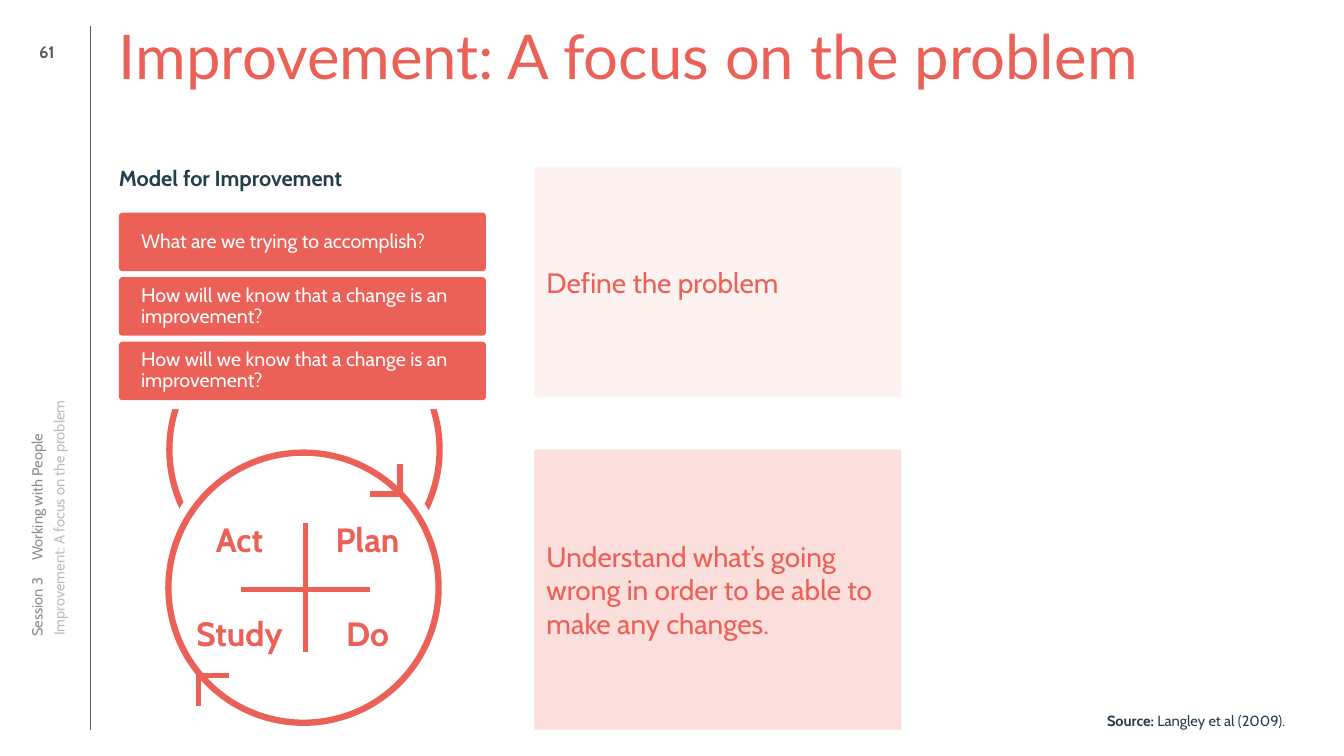
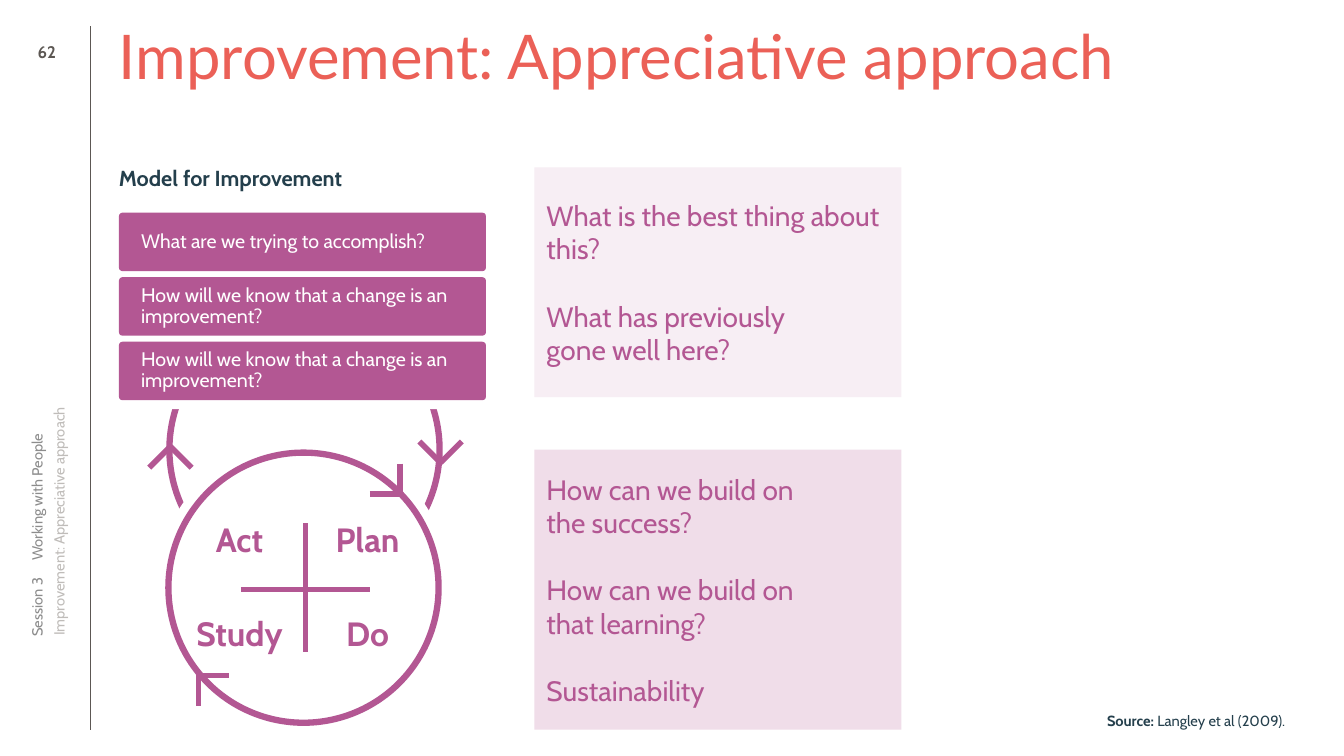
from lxml import etree
from pptx import Presentation
from pptx.dml.color import RGBColor
from pptx.enum.shapes import MSO_CONNECTOR, MSO_SHAPE
from pptx.enum.text import MSO_ANCHOR, PP_ALIGN
from pptx.oxml.ns import qn
from pptx.util import Inches, Pt

LINE = MSO_CONNECTOR.STRAIGHT
RECT, ROUNDED, OVAL = MSO_SHAPE.RECTANGLE, MSO_SHAPE.ROUNDED_RECTANGLE, MSO_SHAPE.OVAL
TOP, MIDDLE = MSO_ANCHOR.TOP, MSO_ANCHOR.MIDDLE
LEFT, CENTER = PP_ALIGN.LEFT, PP_ALIGN.CENTER

HEAD_FONT, BODY_FONT = "Lato", "Cabin"
CORAL, PURPLE, NAVY, WHITE = "EB6057", "B35793", "243F4C", "FFFFFF"
DARK_GREY, MID_GREY, PALE_GREY = "5C5753", "8C8C8C", "BFBCB9"

COLUMN_W = 3.64
QUESTIONS = [
    "What are we trying to accomplish?",
    "How will we know that a change is an improvement?",
    "How will we know that a change is an improvement?",
]
STEPS = [["Act", "Plan"], ["Study", "Do"]]


def color(hex_value):
    return RGBColor.from_string(hex_value)


def write(shape, paragraphs, size, ink, font=BODY_FONT, bold=False, align=LEFT,
          anchor=TOP, inset=(0, 0), spacing=1.0, gap=0, tab=None):
    """Fill a shape with paragraphs in one style."""
    frame = shape.text_frame
    frame.word_wrap = True
    frame.vertical_anchor = anchor
    frame.margin_left = frame.margin_right = Inches(inset[0])
    frame.margin_top = frame.margin_bottom = Inches(inset[1])
    for i, text in enumerate(paragraphs):
        p = frame.add_paragraph() if i else frame.paragraphs[0]
        p.text = text
        p.alignment = align
        p.line_spacing = spacing
        if i:
            p.space_before = Pt(gap)
        if tab:
            tabs = etree.SubElement(p._p.get_or_add_pPr(), qn("a:tabLst"))
            etree.SubElement(tabs, qn("a:tab"), pos=str(Inches(tab)), algn="l")
        p.font.size = Pt(size)
        p.font.name = font
        p.font.bold = bold
        p.font.color.rgb = color(ink)


def add_text(slide, box, text, size, ink, rotation=0, **style):
    label = slide.shapes.add_textbox(*map(Inches, box))
    label.rotation = rotation
    write(label, [text], size, ink, **style)
    return label


def add_block(slide, kind, box, fill, outline=None, width=4.5):
    block = slide.shapes.add_shape(kind, *map(Inches, box))
    block.shadow.inherit = False
    block.fill.solid()
    block.fill.fore_color.rgb = color(fill)
    if outline:
        block.line.color.rgb = color(outline)
        block.line.width = Pt(width)
    else:
        block.line.fill.background()
    return block


def add_line(slide, start, end, ink, width=4):
    line = slide.shapes.add_connector(LINE, *map(Inches, (*start, *end)))
    line.line.color.rgb = color(ink)
    line.line.width = Pt(width)
    etree.SubElement(line._element.spPr, qn("a:effectLst"))


def add_arrowhead(slide, tip, arms, ink):
    """Draw two strokes that meet at the tip."""
    for dx, dy in arms:
        add_line(slide, (tip[0] + dx, tip[1] + dy), tip, ink)


def add_frame(slide, number, title):
    """Title, side rule, page number, side labels and source."""
    add_line(slide, (0.89, 0.26), (0.89, 7.24), DARK_GREY, 0.25)
    add_text(slide, (1.18, 0.26, 11.89, 1.25), title, 44, CORAL,
             font=HEAD_FONT, spacing=0.9)
    add_text(slide, (0.26, 0.26, 0.41, 0.51), str(number), 12, DARK_GREY,
             bold=True, align=CENTER, anchor=MIDDLE)
    add_text(slide, (-1.96, 3.89, 4.65, 0.2), "Session 3\tWorking with People",
             10.5, MID_GREY, rotation=270, anchor=MIDDLE, tab=0.75)
    add_text(slide, (-1.73, 3.91, 4.64, 0.15), title, 10.5, PALE_GREY,
             rotation=270, spacing=0.9)
    source = add_text(slide, (10.98, 7.06, 2.07, 0.18), "", 10.5, NAVY)
    for text, bold in (("Source: ", True), ("Langley et al (2009).", False)):
        run = source.text_frame.paragraphs[0].add_run()
        run.text = text
        run.font.bold = bold


def add_questions(slide, left, top, accent):
    """Heading and the stack of question bars."""
    add_text(slide, (left, top, COLUMN_W, 0.36), "Model for Improvement", 15.5,
             NAVY, bold=True, spacing=0.9)
    for i, question in enumerate(QUESTIONS):
        bar = add_block(slide, ROUNDED,
                        (left, top + 0.45 + 0.64 * i, COLUMN_W, 0.58), accent)
        bar.adjustments[0] = 0.06
        write(bar, [question], 14, WHITE, anchor=MIDDLE, inset=(0.21, 0.12),
              spacing=0.9)


def add_cycle(slide, left, top, accent, loop_arrows):
    """Cycle circle, with the loop behind it that leads to the questions."""
    size, margin, rise = 2.68, 0.12, 1.37
    # Loop, cut off by white areas above and below
    loop_top = top - rise
    add_block(slide, OVAL, (left + 0.01, loop_top, size, size), WHITE, accent)
    if loop_arrows:
        middle = loop_top + size / 2
        add_arrowhead(slide, (left + 0.02, middle - 0.03),
                      [(-0.21, 0.21), (0.21, 0.21)], accent)
        add_arrowhead(slide, (left + size + 0.02, middle + 0.13),
                      [(-0.21, -0.21), (0.21, -0.21)], accent)
    halo = size + 2 * margin
    add_block(slide, OVAL, (left - margin, top - margin, halo, halo), WHITE)
    add_block(slide, RECT, (left - 0.49, top - 2.29, COLUMN_W, 1.86), WHITE)

    # Circle and its arrowheads
    add_block(slide, OVAL, (left, top, size, size), WHITE, accent)
    add_arrowhead(slide, (left + 2.3, top + 0.41), [(-0.3, 0), (0, -0.3)], accent)
    add_arrowhead(slide, (left + 0.3, top + 2.21), [(0.3, 0), (0, 0.3)], accent)

    # Steps and the cross between them
    for row, words in enumerate(STEPS):
        for col, word in enumerate(words):
            add_text(slide, (left + 0.05 + 1.27 * col, top + 0.42 + 0.94 * row,
                             1.31, 0.92),
                     word, 24, accent, bold=True, align=CENTER, anchor=MIDDLE,
                     spacing=0.9)
    x, y, arm = left + 1.36, top + 1.36, 0.64
    add_line(slide, (x - arm, y), (x + arm, y), accent)
    add_line(slide, (x, y - arm - 0.02), (x, y + arm - 0.02), accent)


def add_panel(slide, box, fill, accent, paragraphs):
    panel = add_block(slide, RECT, box, fill)
    write(panel, paragraphs, 20, accent, anchor=MIDDLE, inset=(0.12, 0.12), gap=24)


def add_model_slide(deck, number, title, accent, tints, upper, lower, loop_arrows):
    slide = deck.slides.add_slide(deck.slide_layouts[6])
    add_frame(slide, number, title)
    add_cycle(slide, 1.67, 4.49, accent, loop_arrows)
    add_questions(slide, 1.18, 1.66, accent)
    add_panel(slide, (5.3, 1.66, COLUMN_W, 2.28), tints[0], accent, upper)
    add_panel(slide, (5.3, 4.46, COLUMN_W, 2.78), tints[1], accent, lower)


def main():
    deck = Presentation()
    deck.slide_width, deck.slide_height = Inches(13.33), Inches(7.5)
    add_model_slide(
        deck, 61, "Improvement: A focus on the problem", CORAL,
        ("FCF2F0", "FBDFDD"),
        ["Define the problem"],
        ["Understand what’s going wrong in order to be able to make any changes."],
        loop_arrows=False)
    add_model_slide(
        deck, 62, "Improvement: Appreciative approach", PURPLE,
        ("F7EEF4", "F0DDE9"),
        ["What is the best thing about this?",
         "What has previously\vgone well here?"],
        ["How can we build on\vthe success?",
         "How can we build on\vthat learning?",
         "Sustainability"],
        loop_arrows=True)
    deck.save("out.pptx")


if __name__ == "__main__":
    main()
